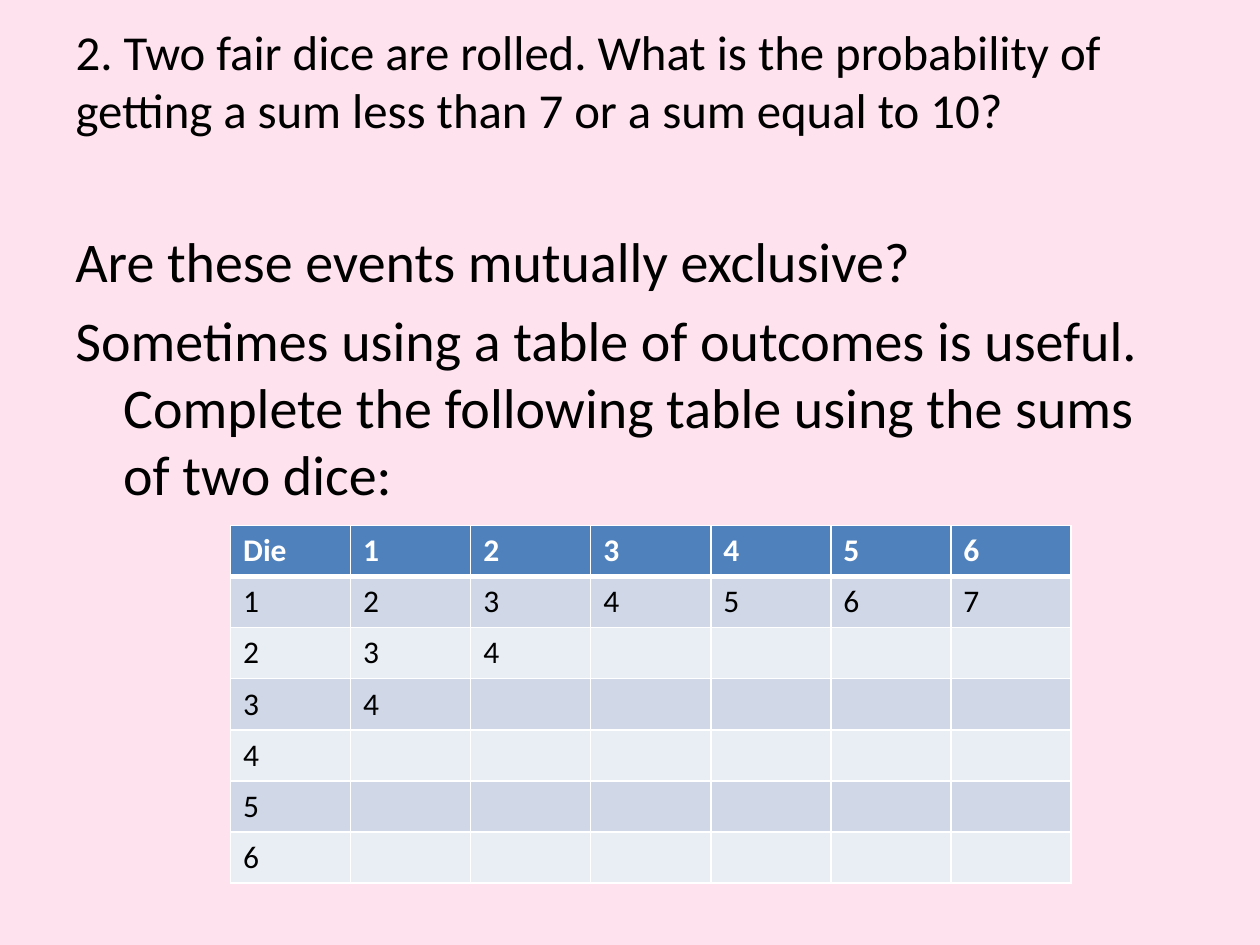
"""Build a slide asking for the sums of two dice, with a table to complete."""
import dataclasses

import pptx
import pptx.dml.color
import pptx.enum.text
import pptx.oxml
import pptx.oxml.ns
import pptx.util

WIDE, HIGH = 10, 7.5
FONT = "Calibri"
HUES = {"back": "FEE2EE", "ink": "000000", "white": "FFFFFF",
        "head": "4F81BD", "odd": "D0D8E8", "even": "E9EDF4"}
SIDES = 6
SHOWN = {1: 6, 2: 2, 3: 1}
TITLE = ("2. Two fair dice are rolled. What is the probability of "
         "getting a sum less than 7 or a sum equal to 10?")
BODY = ("Are these events mutually exclusive?",
        "Sometimes using a table of outcomes is useful. Complete the "
        "following table using the sums of two dice:")


@dataclasses.dataclass(frozen=True)
class Box:
    """An area given as shares of the slide's size."""
    left: float
    top: float
    wide: float
    high: float

    def place(self) -> tuple:
        """Return left, top, width and height as lengths."""
        spans = (self.left * WIDE, self.top * HIGH, self.wide * WIDE, self.high * HIGH)
        return tuple(pptx.util.Inches(span) for span in spans)


@dataclasses.dataclass(frozen=True)
class Style:
    """The look of one kind of table row."""
    fill: str
    ink: str
    bold: bool
    base: float


HEAD = Style("head", "white", True, 3)
FIRST = Style("odd", "ink", False, 1)
NEXT = Style("even", "ink", False, 1)


def hue(name: str) -> pptx.dml.color.RGBColor:
    """Look up a colour by name."""
    return pptx.dml.color.RGBColor.from_string(HUES[name])


def set_font(para, size: float, ink: str = "ink", bold: bool = False) -> None:
    """Set the font of a paragraph."""
    font = para.font
    font.name, font.size, font.bold = FONT, pptx.util.Pt(size), bold
    font.color.rgb = hue(ink)


def add_edge(cell, side: str, width: float) -> None:
    """Draw a white border on one side of a cell."""
    edge = pptx.oxml.parse_xml(
        f'<a:{side} {pptx.oxml.ns.nsdecls("a")} w="{pptx.util.Pt(width)}">'
        f'<a:solidFill><a:srgbClr val="{HUES["white"]}"/></a:solidFill></a:{side}>')
    props = cell._tc.get_or_add_tcPr()
    props.insert(("lnL", "lnR", "lnT", "lnB").index(side), edge)


def fill_cell(cell, text: str, style: Style, top: float) -> None:
    """Write, colour and border one cell."""
    cell.text = text
    set_font(cell.text_frame.paragraphs[0], 18, style.ink, style.bold)
    cell.fill.solid()
    cell.fill.fore_color.rgb = hue(style.fill)
    for side, width in (("lnL", 1), ("lnR", 1), ("lnT", top), ("lnB", style.base)):
        add_edge(cell, side, width)


def label(row: int, col: int) -> str:
    """Return the text of a cell: a die face, a given sum, or nothing."""
    if row == 0 or col == 0:
        return str(row + col) if row + col else "Die"
    return str(row + col) if col <= SHOWN.get(row, 0) else ""


def add_title(slide, box: Box) -> None:
    """Place and format the title."""
    title = slide.shapes.title
    title.left, title.top, title.width, title.height = box.place()
    frame = title.text_frame
    frame.text = TITLE
    frame.word_wrap = True
    frame.auto_size = pptx.enum.text.MSO_AUTO_SIZE.NONE
    frame.vertical_anchor = pptx.enum.text.MSO_ANCHOR.MIDDLE
    frame.margin_bottom = pptx.util.Inches(0.63)
    para = frame.paragraphs[0]
    para.alignment = pptx.enum.text.PP_ALIGN.LEFT
    set_font(para, 27.9)


def add_body(slide, box: Box) -> None:
    """Write the body paragraphs with hanging indents."""
    frame = slide.shapes.add_textbox(*box.place()).text_frame
    frame.word_wrap = True
    frame.text = "\n".join(BODY)
    hang = pptx.util.Inches(0.38)
    for para in frame.paragraphs:
        set_font(para, 32)
        para.space_before = pptx.util.Pt(6.4)
        props = para._p.get_or_add_pPr()
        props.set("marL", str(hang))
        props.set("indent", str(-hang))


def add_sums(slide, box: Box) -> None:
    """Draw the table of sums."""
    count = SIDES + 1
    table = slide.shapes.add_table(count, count, *box.place()).table
    for row in range(count):
        style = HEAD if row == 0 else FIRST if row % 2 else NEXT
        top = HEAD.base if row == 1 else 1
        for col in range(count):
            fill_cell(table.cell(row, col), label(row, col), style, top)


def main() -> None:
    """Build and save the slide."""
    deck = pptx.Presentation()
    deck.slide_width = pptx.util.Inches(WIDE)
    deck.slide_height = pptx.util.Inches(HIGH)
    slide = deck.slides.add_slide(deck.slide_layouts[5])
    slide.background.fill.solid()
    slide.background.fill.fore_color.rgb = hue("back")
    add_title(slide, Box(0.05, 0.04, 0.9, 1.25 / HIGH))
    add_body(slide, Box(0.05, 1.75 / HIGH, 0.9, 0.66))
    add_sums(slide, Box(1.83 / WIDE, 4.17 / HIGH, 6.67 / WIDE, 2.84 / HIGH))
    deck.save("out.pptx")


if __name__ == "__main__":
    main()
